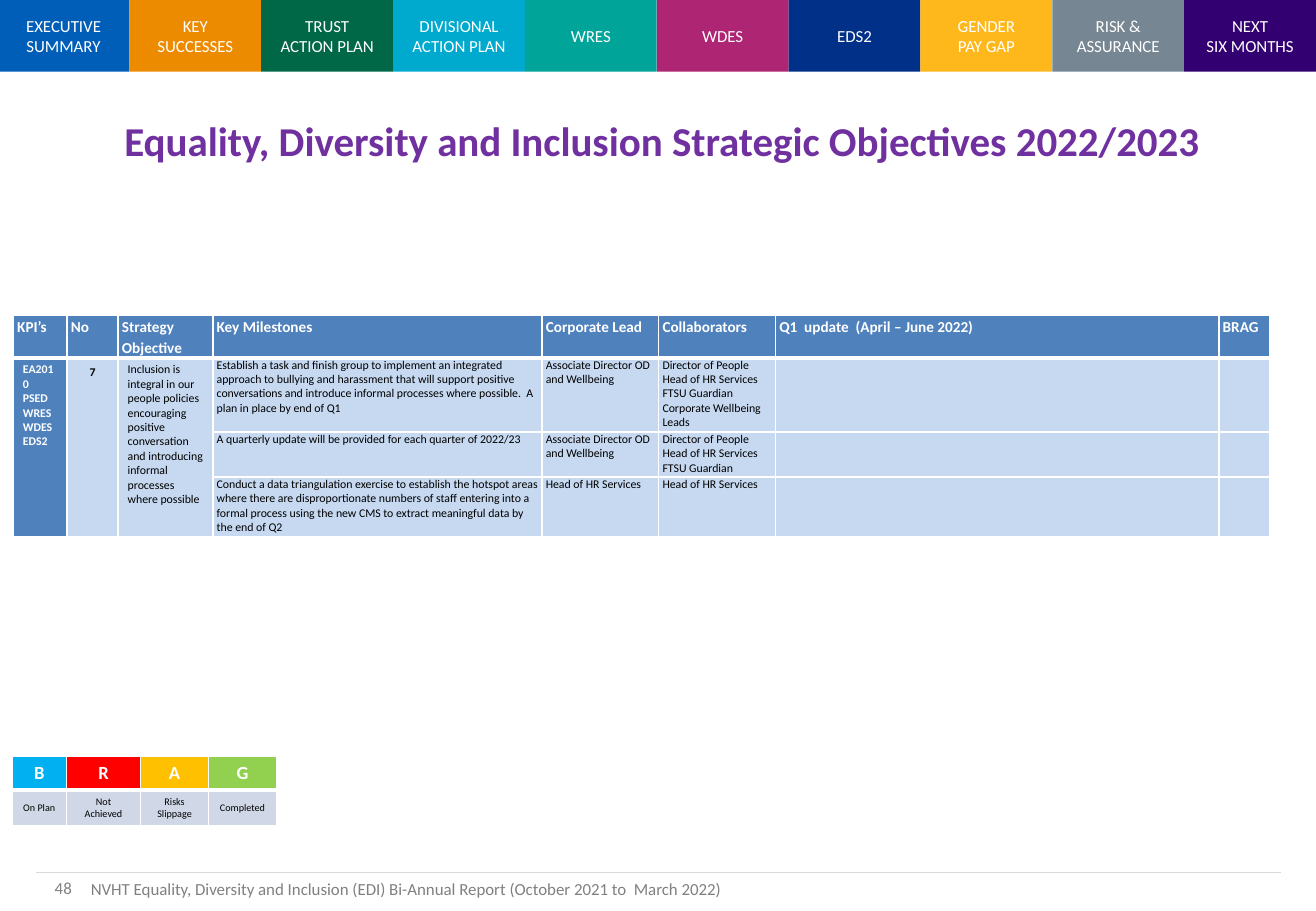
from dataclasses import dataclass

from lxml.etree import SubElement
from pptx import Presentation
from pptx.dml.color import RGBColor
from pptx.enum.shapes import MSO_CONNECTOR as Connector, MSO_SHAPE as Shape
from pptx.enum.text import MSO_ANCHOR as Anchor, PP_ALIGN as Align
from pptx.oxml.ns import qn
from pptx.util import Cm, Pt


@dataclass(frozen=True)
class Theme:
    font: str = "Calibri"
    white: str = "FFFFFF"
    black: str = "000000"
    title: str = "7030A0"
    footer: str = "808080"
    rule: str = "D9D9D9"
    header: str = "4F81BD"
    body: str = "C6D9F1"
    legend: str = "D0D8E8"
    title_size: float = 24.3
    nav_size: float = 10
    header_size: float = 9
    body_size: float = 7
    brag_size: float = 11
    legend_size: float = 6
    thin: float = 1
    thick: float = 3


class SlideBuilder:
    def __init__(self, slide, theme):
        self.slide, self.theme = slide, theme

    def set_text(self, frame, text, size, color, bold=False, align=Align.LEFT, spacing=None):
        frame.text = text
        frame.word_wrap = True
        for paragraph in frame.paragraphs:
            paragraph.alignment = align
            paragraph.line_spacing = spacing
            for run in paragraph.runs:
                run.font.name = self.theme.font
                run.font.size = Pt(size)
                run.font.bold = bold
                run.font.color.rgb = RGBColor.from_string(color)

    def title(self, text, left, top, width, height):
        title = self.slide.shapes.title
        title.left, title.top, title.width, title.height = map(Cm, (left, top, width, height))
        self.set_text(title.text_frame, text, self.theme.title_size, self.theme.title, True, Align.CENTER)
        title.text_frame.vertical_anchor = Anchor.MIDDLE

    def nav_tab(self, text, color, left, width, height):
        tab = self.slide.shapes.add_shape(Shape.RECTANGLE, Cm(left), 0, Cm(width), Cm(height))
        tab.shadow.inherit = False
        tab.fill.solid()
        tab.fill.fore_color.rgb = RGBColor.from_string(color)
        tab.line.fill.background()
        self.set_text(tab.text_frame, text, self.theme.nav_size, self.theme.white, align=Align.CENTER)
        tab.text_frame.vertical_anchor = Anchor.MIDDLE

    def text(self, text, left, top, width, height, align=Align.LEFT, anchor=Anchor.TOP):
        box = self.slide.shapes.add_textbox(Cm(left), Cm(top), Cm(width), Cm(height))
        self.set_text(box.text_frame, text, self.theme.nav_size, self.theme.footer, align=align)
        box.text_frame.vertical_anchor = anchor

    def rule(self, left, right, y):
        rule = self.slide.shapes.add_connector(Connector.STRAIGHT, Cm(left), Cm(y), Cm(right), Cm(y))
        rule.line.color.rgb = RGBColor.from_string(self.theme.rule)
        rule.line.width = Pt(0.75)
        SubElement(rule._element.spPr, qn("a:effectLst"))

    def table(self, left, top, widths, heights):
        table = self.slide.shapes.add_table(
            len(heights), len(widths), Cm(left), Cm(top), Cm(sum(widths)), Cm(sum(heights))).table
        table.horz_banding = False
        for column, width in zip(table.columns, widths):
            column.width = Cm(width)
        for row, height in zip(table.rows, heights):
            row.height = Cm(height)
        # White grid, with a heavier line under the header
        for r in range(len(heights)):
            for c in range(len(widths)):
                heavy = {0: "lnB", 1: "lnT"}.get(r)
                self.borders(table.cell(r, c), heavy)
        return table

    def borders(self, cell, heavy):
        properties = cell._tc.get_or_add_tcPr()
        for side in ("lnL", "lnR", "lnT", "lnB"):
            width = self.theme.thick if side == heavy else self.theme.thin
            line = SubElement(properties, qn(f"a:{side}"), w=str(Pt(width)))
            SubElement(SubElement(line, qn("a:solidFill")), qn("a:srgbClr"), val=self.theme.white)

    def cell(self, cell, text, fill, size, color, inset=(0.08, 0), anchor=Anchor.TOP, **style):
        cell.fill.solid()
        cell.fill.fore_color.rgb = RGBColor.from_string(fill)
        cell.margin_left = cell.margin_right = Cm(inset[0])
        cell.margin_top = cell.margin_bottom = Cm(inset[1])
        cell.vertical_anchor = anchor
        self.set_text(cell.text_frame, text, size, color, **style)


NAV_TABS = [
    ("EXECUTIVE SUMMARY", "005EB8"), ("KEY\nSUCCESSES", "ED8B00"),
    ("TRUST\nACTION PLAN", "006747"), ("DIVISIONAL\nACTION PLAN", "00A9CE"),
    ("WRES", "00A499"), ("WDES", "AE2573"), ("EDS2", "003087"),
    ("GENDER\nPAY GAP", "FFB81C"), ("RISK & ASSURANCE", "768692"),
    ("NEXT\nSIX MONTHS", "330072"),
]
BRAG = [
    ("B", "00B0F0", "On Plan"), ("R", "FF0000", "Not Achieved"),
    ("A", "FFC000", "Risks Slippage"), ("G", "92D050", "Completed"),
]
HEADINGS = ["KPI’s", "No", "Strategy Objective", "Key Milestones", "Corporate Lead",
            "Collaborators", "Q1  update  (April – June 2022)", "BRAG"]
KPIS = "EA2010\nPSED\nWRES\nWDES\nEDS2"
OBJECTIVE = ("Inclusion is integral in our people policies encouraging positive conversation "
             "and introducing informal processes where possible")
MILESTONES = [
    ("Establish a task and finish group to implement an integrated approach to bullying and "
     "harassment that will support positive conversations and introduce informal processes "
     "where possible.  A plan in place by end of Q1",
     "Associate Director OD and Wellbeing",
     "Director of People\nHead of HR Services\nFTSU Guardian\nCorporate Wellbeing Leads", "", ""),
    ("A quarterly update will be provided for each quarter of 2022/23",
     "Associate Director OD and Wellbeing",
     "Director of People\nHead of HR Services\nFTSU Guardian", "", ""),
    ("Conduct a data triangulation exercise to establish the hotspot areas where there are "
     "disproportionate numbers of staff entering into a formal process using the new CMS to "
     "extract meaningful data by the end of Q2",
     "Head of HR Services", "Head of HR Services", "", ""),
]


def main():
    deck = Presentation()
    deck.slide_width, deck.slide_height = Cm(27.51), Cm(19.05)
    theme = Theme()
    page = SlideBuilder(deck.slides.add_slide(deck.slide_layouts[5]), theme)

    # Navigation bar
    tab_left, tab_right = -0.05, 27.51
    tab_width = (tab_right - tab_left) / len(NAV_TABS)
    for i, (label, color) in enumerate(NAV_TABS):
        page.nav_tab(label, color, tab_left + i * tab_width, tab_width, 1.5)

    page.title("Equality, Diversity and Inclusion Strategic Objectives 2022/2023",
               1.37, 2.11, 24.94, 1.63)

    # BRAG legend
    legend = page.table(0.25, 15.82, [1.14, 1.55, 1.42, 1.42], [0.69, 0.71])
    centred = dict(inset=(0.22, 0.11), anchor=Anchor.MIDDLE, align=Align.CENTER)
    for c, (letter, color, meaning) in enumerate(BRAG):
        page.cell(legend.cell(0, c), letter, color, theme.brag_size, theme.white, bold=True, **centred)
        page.cell(legend.cell(1, c), meaning, theme.legend, theme.legend_size, theme.black, **centred)

    # Objectives table
    objectives = page.table(0.28, 6.6, [1.12, 1.07, 1.98, 6.88, 2.44, 2.44, 9.27, 1.07],
                            [0.84, 1.55, 0.94, 1.24])
    for c, heading in enumerate(HEADINGS):
        page.cell(objectives.cell(0, c), heading, theme.header, theme.header_size, theme.white,
                  bold=True, spacing=1.15)
    spanning = [
        (KPIS, theme.header, theme.white, dict(bold=True)),
        ("7", theme.body, theme.black, dict(bold=True, align=Align.CENTER, spacing=1.15)),
        (OBJECTIVE, theme.body, theme.black, {}),
    ]
    for c, (text, fill, color, style) in enumerate(spanning):
        objectives.cell(1, c).merge(objectives.cell(3, c))
        page.cell(objectives.cell(1, c), text, fill, theme.body_size, color, inset=(0.2, 0.1), **style)
    for r, milestone in enumerate(MILESTONES, start=1):
        for c, text in enumerate(milestone, start=len(spanning)):
            page.cell(objectives.cell(r, c), text, theme.body, theme.body_size, theme.black)

    # Footer
    page.rule(0.76, 26.77, 18.24)
    page.text("48", 0.2, 18.11, 1.55, 0.91, Align.RIGHT, Anchor.MIDDLE)
    page.text("NVHT Equality, Diversity and Inclusion (EDI) Bi-Annual Report (October 2021 to  March 2022)",
              1.65, 18.24, 21.59, 0.69)

    deck.save("out.pptx")


if __name__ == "__main__":
    main()
